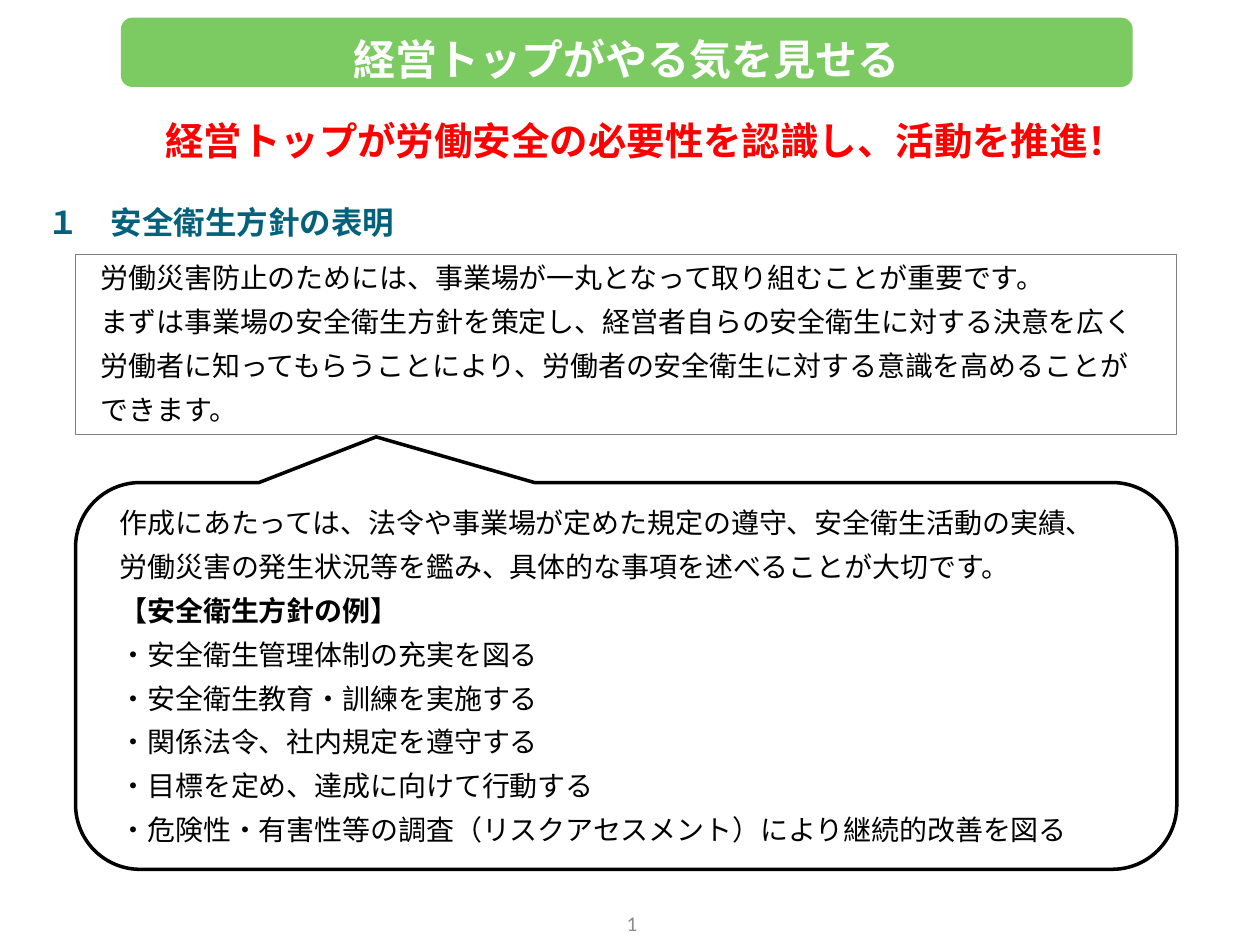
from lxml import etree
from pptx import Presentation, util as u
from pptx.dml.color import RGBColor
from pptx.enum import shapes, text
from pptx.oxml import ns

# Content
TITLE = "経営トップがやる気を見せる"
LEAD = "経営トップが労働安全の必要性を認識し、活動を推進！"
HEAD = "１　安全衛生方針の表明"
POLICY = [
    "労働災害防止のためには、事業場が一丸となって取り組むことが重要です。",
    "まずは事業場の安全衛生方針を策定し、経営者自らの安全衛生に対する決意を広く",
    "労働者に知ってもらうことにより、労働者の安全衛生に対する意識を高めることが",
    "できます。",
]
ADVICE = [
    "作成にあたっては、法令や事業場が定めた規定の遵守、安全衛生活動の実績、",
    "労働災害の発生状況等を鑑み、具体的な事項を述べることが大切です。",
    "【安全衛生方針の例】",
    "・安全衛生管理体制の充実を図る",
    "・安全衛生教育・訓練を実施する",
    "・関係法令、社内規定を遵守する",
    "・目標を定め、達成に向けて行動する",
    "・危険性・有害性等の調査（リスクアセスメント）により継続的改善を図る",
]
BOLD = {ADVICE[2]}
PAGE = "1"

# Style
INK = {"green": "7CCA62", "teal": "04617B", "red": "FF0000", "gray": "808080",
       "page": "8C8C8C", "black": "000000", "white": "FFFFFF"}
SANS = "Noto Sans CJK JP"
LEFT, WIDE = 0.6, 8.74
KIND = shapes.MSO_SHAPE
ALIGN = text.PP_ALIGN
MID, TOP = text.MSO_ANCHOR.MIDDLE, text.MSO_ANCHOR.TOP
BODY = dict(size=16, ink="black", align=ALIGN.JUSTIFY, dent=(0.4, -0.3),
            gap=6, lead=u.Pt(19.1))

deck = Presentation()
deck.slide_width, deck.slide_height = u.Inches(10), u.Inches(7.5)
slide = deck.slides.add_slide(deck.slide_layouts[6])


def color(name):
    return RGBColor.from_string(INK[name])


def panel(kind, box, fill=None, line=None, width=1):
    item = slide.shapes.add_shape(kind, *map(u.Inches, box))
    item.shadow.inherit = False
    if fill:
        item.fill.solid()
        item.fill.fore_color.rgb = color(fill)
    else:
        item.fill.background()
    if line:
        item.line.color.rgb = color(line)
        item.line.width = u.Pt(width)
    else:
        item.line.fill.background()
    return item


def label(box):
    return slide.shapes.add_textbox(*map(u.Inches, box))


def write(item, rows, size, ink, align=ALIGN.CENTER, anchor=MID, font=SANS,
          bold=False, dent=None, gap=0, lead=None):
    frame = item.text_frame
    frame.word_wrap = True
    frame.vertical_anchor = anchor
    for i, row in enumerate(rows):
        para = frame.paragraphs[0] if i == 0 else frame.add_paragraph()
        para.alignment = align
        para.space_before = u.Pt(gap)
        if lead:
            para.line_spacing = lead
        if dent:
            props = para._p.get_or_add_pPr()
            for key, inch in zip(("marL", "indent"), dent):
                props.set(key, str(u.Inches(inch)))
        run = para.add_run()
        run.text = row
        run.font.size = u.Pt(size)
        run.font.bold = bold or row in BOLD
        run.font.color.rgb = color(ink)
        run.font.name = font
        # East Asian glyphs take their own typeface
        east = etree.SubElement(run._r.get_or_add_rPr(), ns.qn("a:ea"))
        east.set("typeface", SANS)


# Title bar, lead and heading
bar = panel(KIND.ROUNDED_RECTANGLE, (0.96, 0.14, 8.03, 0.55), "green")
write(bar, [TITLE], 24, "white", font="Arial", bold=True, lead=1.25)
write(label((LEFT, 0.88, 8.95, 0.47)), [LEAD], 22, "red", bold=True,
      dent=(0.1, 0))
write(label((0.28, 1.41, 6.06, 0.52)), [HEAD], 18, "teal", ALIGN.JUSTIFY,
      TOP, bold=True, dent=(0.4, -0.4), gap=6, lead=1.5)

# Policy box and the callout that points to it
policy = panel(KIND.RECTANGLE, (LEFT, 2.02, WIDE, 1.43), None, "gray", 0.75)
write(policy, POLICY, anchor=TOP, **BODY)
advice = panel(KIND.ROUNDED_RECTANGULAR_CALLOUT, (LEFT, 3.83, WIDE, 3.07),
               "white", "black", 2)
for i, share in enumerate((-0.227, -0.618, 0.167)):
    advice.adjustments[i] = share
write(advice, ADVICE, **BODY)

# Page number
write(label((3.85, 7.13, 2.33, 0.4)), [PAGE], 12, "page", font="Calibri")

deck.save("out.pptx")
